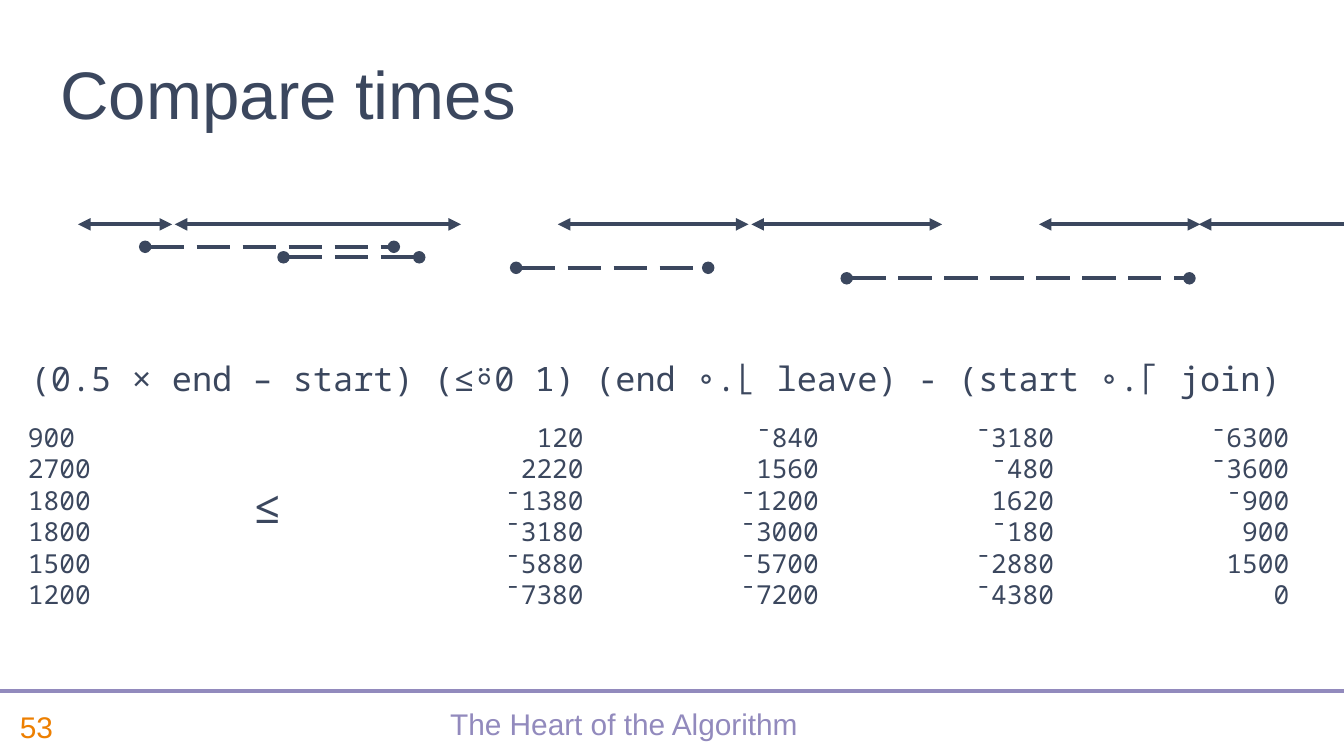
from lxml.etree import SubElement
from pptx import Presentation
from pptx.dml.color import RGBColor
from pptx.enum.dml import MSO_LINE
from pptx.enum.shapes import MSO_CONNECTOR
from pptx.enum.text import MSO_ANCHOR, MSO_AUTO_SIZE, PP_ALIGN
from pptx.oxml.ns import qn
from pptx.util import Pt

SLATE = RGBColor(0x3B, 0x47, 0x5E)
LAVENDER = RGBColor(0x92, 0x8A, 0xBD)
ORANGE = RGBColor(0xED, 0x7F, 0x00)
SANS, MONO = "Arial", "Noto Sans Mono"
SLIDE_WIDTH, SLIDE_HEIGHT = 720, 405

SESSIONS = [(41.8, 92.2), (93.6, 247), (298.8, 401), (402.5, 504.7),
            (556.6, 643), (642.2, 729.4)]
VISITS = [(77.8, 211), (151.9, 224.6), (276.5, 379.4), (453.6, 637.2)]

FORMULA = "(0.5 × end – start) (≤⍤0 1) (end ∘.⌊ leave) - (start ∘.⌈ join)"
HALF_LENGTHS = ["900", "2700", "1800", "1800", "1500", "1200"]
OVERLAPS = [
    ["120", "¯840", "¯3180", "¯6300"],
    ["2220", "1560", "¯480", "¯3600"],
    ["¯1380", "¯1200", "1620", "¯900"],
    ["¯3180", "¯3000", "¯180", "900"],
    ["¯5880", "¯5700", "¯2880", "1500"],
    ["¯7380", "¯7200", "¯4380", "0"],
]


def write(frame, lines, font=SANS, size=16, color=SLATE, align=PP_ALIGN.LEFT,
          anchor=MSO_ANCHOR.TOP, spacing=None, tabs=()):
    frame.word_wrap = True
    frame.auto_size = MSO_AUTO_SIZE.NONE
    frame.vertical_anchor = anchor
    for index, line in enumerate(lines):
        paragraph = frame.paragraphs[0] if index == 0 else frame.add_paragraph()
        paragraph.alignment = align
        if spacing:
            paragraph.line_spacing = spacing
        if tabs:
            stops = SubElement(paragraph._p.get_or_add_pPr(), qn("a:tabLst"))
            for position in tabs:
                SubElement(stops, qn("a:tab"), pos=str(Pt(position)), algn="r")
        run = paragraph.add_run()
        run.text = line
        run.font.name = font
        run.font.size = Pt(size)
        run.font.color.rgb = color


def add_text(slide, box, lines, **style):
    write(slide.shapes.add_textbox(*map(Pt, box)).text_frame, lines, **style)


def add_line(slide, start, end, y, color=SLATE, ends=None, dash=None):
    connector = slide.shapes.add_connector(
        MSO_CONNECTOR.STRAIGHT, Pt(start), Pt(y), Pt(end), Pt(y))
    connector.line.color.rgb = color
    connector.line.width = Pt(2.25)
    if dash:
        connector.line.dash_style = dash
    if ends:
        outline = connector.line._get_or_add_ln()
        for tag in ("a:headEnd", "a:tailEnd"):
            SubElement(outline, qn(tag), type=ends)
    SubElement(connector._element.spPr, qn("a:effectLst"))


def add_title(slide, box, text):
    title = slide.shapes.title
    title.left, title.top, title.width, title.height = map(Pt, box)
    write(title.text_frame, [text], size=36, anchor=MSO_ANCHOR.BOTTOM)


def add_timeline(slide, box):
    left, top, _, height = box
    for start, end in SESSIONS:
        add_line(slide, left + start, left + end, top, ends="triangle")
    step = 5.63
    first = top + height - step * (len(VISITS) - 1)
    for row, (start, end) in enumerate(VISITS):
        add_line(slide, left + start, left + end, first + row * step,
                 ends="oval", dash=MSO_LINE.LONG_DASH)


def add_comparison(slide, box):
    left, top, width, height = box
    add_text(slide, (left, top, width, 29), [FORMULA], font=MONO, size=18)
    rows_top, rows_height = top + 34, height - 34
    rows = dict(font=MONO, size=14, spacing=Pt(16.9))
    add_text(slide, (left - 1.5, rows_top, 59, rows_height), HALF_LENGTHS, **rows)
    add_text(slide, (left + 119.5, rows_top + 31, 59, 40), ["≤"], font=MONO, size=24)
    add_text(slide, (left + 237.5, rows_top, 462, rows_height),
             ["\t" + "\t".join(row) for row in OVERLAPS],
             tabs=[58.8 + 126 * column for column in range(4)], **rows)


def add_footer(slide, box):
    left, top, width, height = box
    add_line(slide, left, left + width, top, color=LAVENDER)
    text_top, text_height = top + 3.6, height - 3.6
    number_width = 52.5
    add_text(slide, (left + 3.6, text_top, number_width, text_height), ["53"],
             color=ORANGE, anchor=MSO_ANCHOR.MIDDLE)
    add_text(slide, (left + 3.6 + number_width, text_top, 556.5, text_height),
             ["The Heart of the Algorithm"], color=LAVENDER,
             align=PP_ALIGN.CENTER, anchor=MSO_ANCHOR.MIDDLE, spacing=0.8)


def main():
    presentation = Presentation()
    presentation.slide_width = Pt(SLIDE_WIDTH)
    presentation.slide_height = Pt(SLIDE_HEIGHT)
    slide = presentation.slides.add_slide(presentation.slide_layouts[5])
    add_footer(slide, (0, 370, SLIDE_WIDTH, 35))
    add_timeline(slide, (0, 120.2, SLIDE_WIDTH, 28.9))
    add_title(slide, (25.2, 20.9, 551.5, 54), "Compare times")
    add_comparison(slide, (9.4, 188, 687, 142.7))
    presentation.save("out.pptx")


if __name__ == "__main__":
    main()
